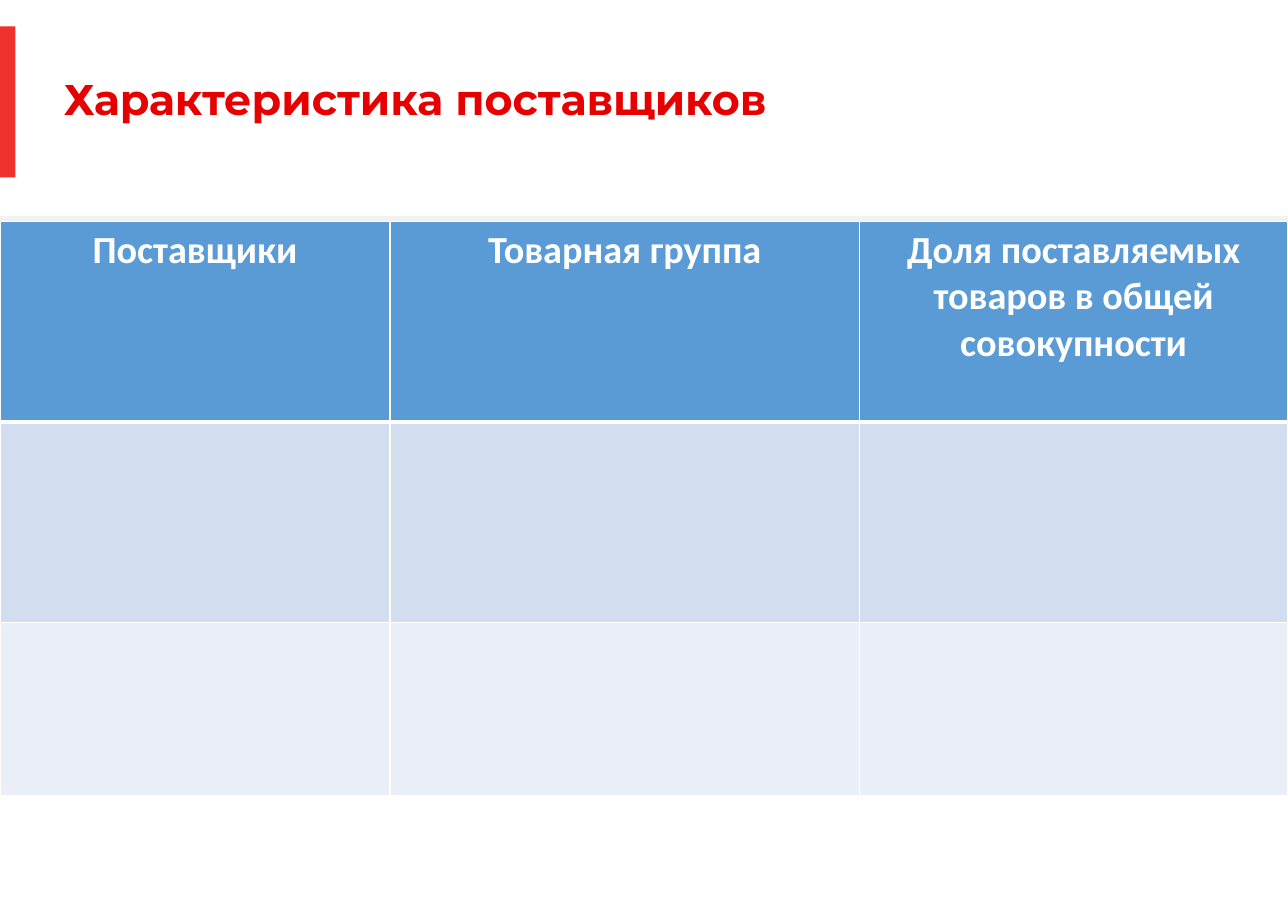
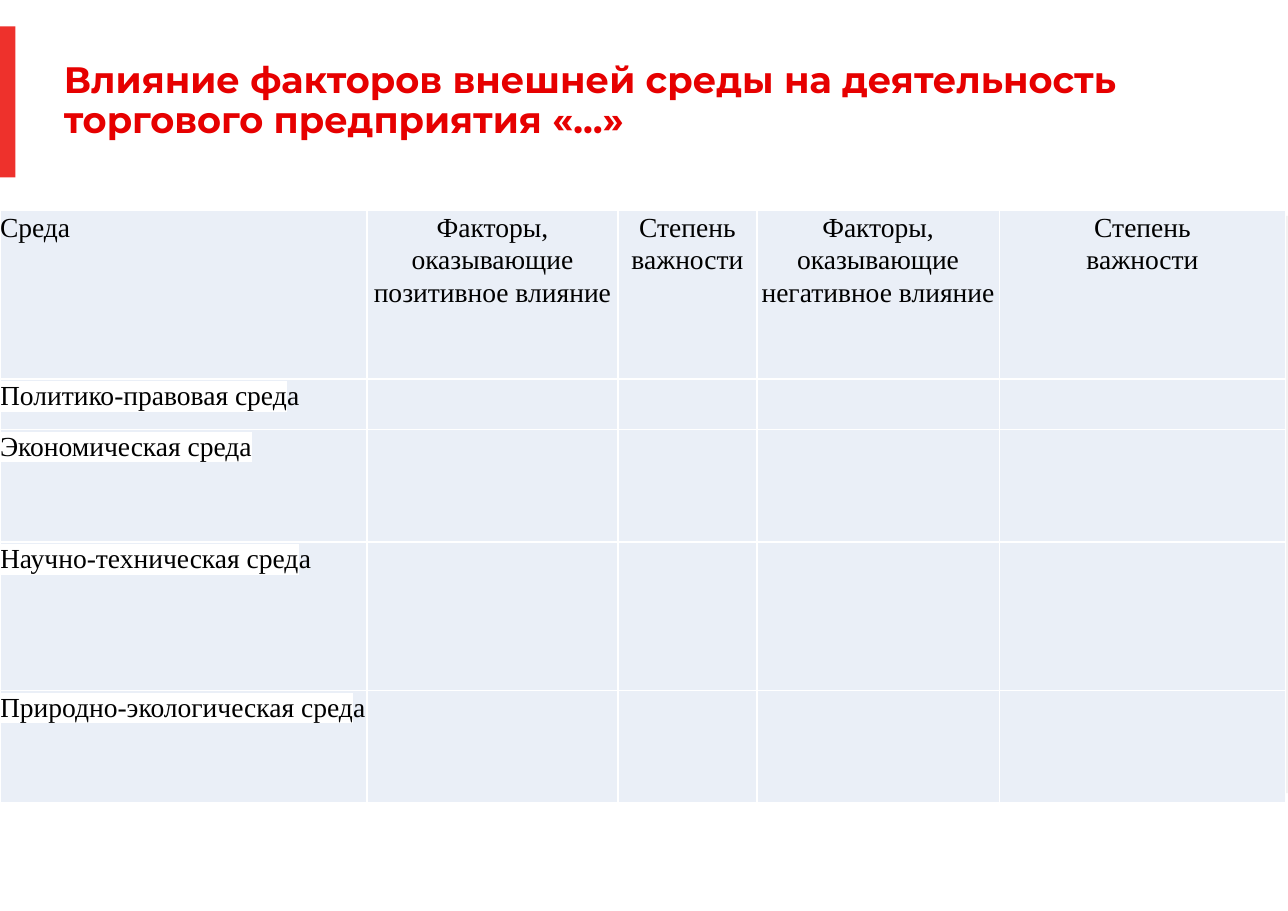
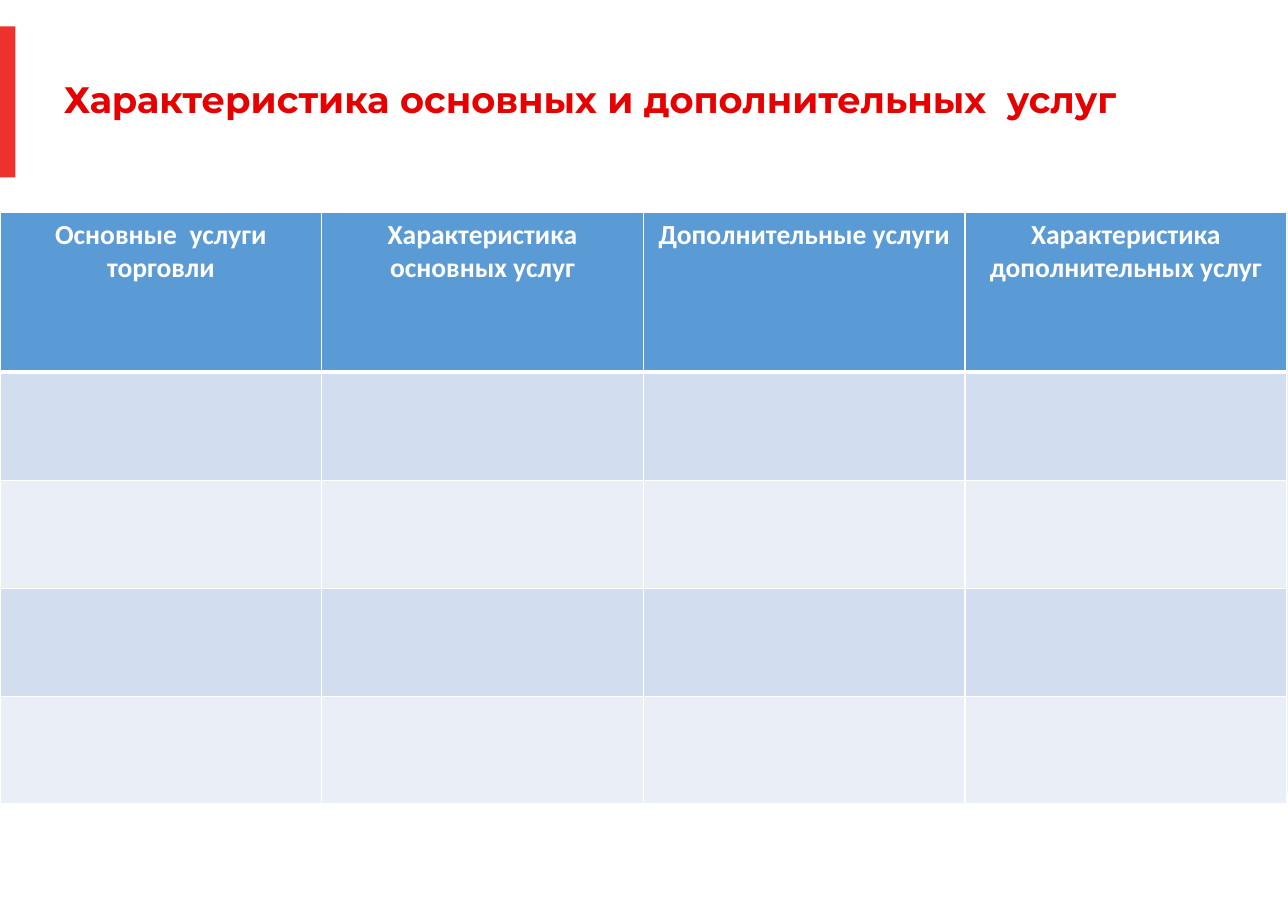
from dataclasses import dataclass

from lxml import etree
from pptx import Presentation
from pptx import util as u
from pptx.dml.color import RGBColor
from pptx.enum import shapes, text
from pptx.oxml import ns

PX = 9144  # EMU: 100 px to the inch
PAGE = (1169, 827)
BAND = (0, 196, 1169, 524)
HEADER = (0, 24, 1117, 137)


@dataclass(frozen=True)
class Theme:
    title_font: str = "Montserrat"
    title: str = "E60000"
    accent: str = "EE312C"
    band: str = "F2F2F2"
    white: str = "FFFFFF"
    black: str = "000000"
    head_fill: str = "5B9BD5"
    dark_row: str = "D2DEEF"
    light_row: str = "EAEFF7"
    title_large: int = 28
    title_small: int = 24
    head_large: int = 25
    body: int = 18
    thin_rule: int = 1
    thick_rule: int = 3


THEME = Theme()


@dataclass(frozen=True)
class TextStyle:
    font: str
    size: int
    color: str
    bold: bool = False
    spacing: float = 1.0


def emu(box):
    return [u.Emu(length * PX) for length in box]


def style_paragraph(para, style, align=text.PP_ALIGN.LEFT):
    para.alignment = align
    para.line_spacing = style.spacing
    font = para.font
    font.name, font.size, font.bold = style.font, u.Pt(style.size), style.bold
    font.color.rgb = RGBColor.from_string(style.color)


def add_block(page, box, color):
    block = page.shapes.add_shape(shapes.MSO_SHAPE.RECTANGLE, *emu(box))
    block.shadow.inherit = False
    block.fill.solid()
    block.fill.fore_color.rgb = RGBColor.from_string(color)
    block.line.fill.background()


def add_header(page, box, title, size, lines=1):
    """Place the accent bar and, centred on its height, the title."""
    left, top, width, height = box
    add_block(page, (left, top, 14, height), THEME.accent)
    title_height = lines * size * 3 // 2
    title_top = top + (height - title_height) // 2
    title_box = page.shapes.add_textbox(
        *emu((left + 58, title_top, width - 58, title_height)))
    frame = title_box.text_frame
    frame.word_wrap = True
    frame.vertical_anchor = text.MSO_ANCHOR.MIDDLE
    frame.margin_left = frame.margin_right = frame.margin_top = frame.margin_bottom = 0
    para = frame.paragraphs[0]
    para.text = title
    style_paragraph(para, TextStyle(THEME.title_font, size, THEME.title, True, 0.9))


def add_solid_color(parent, tag, color):
    holder = etree.SubElement(parent, ns.qn(tag))
    etree.SubElement(holder, ns.qn("a:srgbClr"), val=color)


def set_borders(cell, top, bottom):
    """Rule a cell in white; top and bottom are widths in points."""
    widths = {"L": THEME.thin_rule, "R": THEME.thin_rule, "T": top, "B": bottom}
    properties = cell._tc.get_or_add_tcPr()
    for index, (side, width) in enumerate(widths.items()):
        line = etree.Element(ns.qn(f"a:ln{side}"), w=str(u.Pt(width)))
        add_solid_color(line, "a:solidFill", THEME.white)
        properties.insert(index, line)


def add_table(page, origin, columns, rows, fills, head_rule=THEME.thin_rule):
    """Add a ruled table with one fill for each row."""
    box = (*origin, sum(columns), sum(rows))
    table = page.shapes.add_table(len(rows), len(columns), *emu(box)).table
    table.first_row = head_rule > THEME.thin_rule
    table.horz_banding = False
    for column, width in zip(table.columns, emu(columns)):
        column.width = width
    for row, height in zip(table.rows, emu(rows)):
        row.height = height
    rules = [THEME.thin_rule, head_rule] + [THEME.thin_rule] * (len(rows) - 1)
    for index, fill in enumerate(fills):
        for cell in table.rows[index].cells:
            cell.fill.solid()
            cell.fill.fore_color.rgb = RGBColor.from_string(fill)
            set_borders(cell, rules[index], rules[index + 1])
    return table


def add_banded_table(page, origin, columns, rows, headings, size):
    bands = [(THEME.dark_row, THEME.light_row)[i % 2] for i in range(len(rows) - 1)]
    table = add_table(page, origin, columns, rows, [THEME.head_fill, *bands],
                      THEME.thick_rule)
    style = TextStyle("Calibri", size, THEME.white, True)
    for cell, heading in zip(table.rows[0].cells, headings):
        cell.text = heading
        style_paragraph(cell.text_frame.paragraphs[0], style, text.PP_ALIGN.CENTER)


def add_factor_table(page, origin, columns, rows, headings, environments):
    """Add a plain table; each environment is a highlighted and a plain part."""
    table = add_table(page, origin, columns, rows, [THEME.light_row] * len(rows))
    style = TextStyle("Times New Roman", THEME.body, THEME.black, spacing=1.07)
    for index, (cell, heading) in enumerate(zip(table.rows[0].cells, headings)):
        cell.text = heading
        align = text.PP_ALIGN.CENTER if index else text.PP_ALIGN.LEFT
        for para in cell.text_frame.paragraphs:
            style_paragraph(para, style, align)
    for index, (marked, plain) in enumerate(environments, start=1):
        para = table.cell(index, 0).text_frame.paragraphs[0]
        span = para.add_run()
        span.text = marked
        add_solid_color(span._r.get_or_add_rPr(), "a:highlight", THEME.white)
        if plain:
            para.add_run().text = plain
        style_paragraph(para, style)
    labels = [*table.rows[0].cells, *(table.cell(i, 0) for i in range(1, len(rows)))]
    for cell in labels:
        cell.margin_left = cell.margin_right = cell.margin_top = cell.margin_bottom = 0


def add_page(deck, title, size, lines=1):
    page = deck.slides.add_slide(deck.slide_layouts[6])
    add_block(page, BAND, THEME.band)
    add_header(page, HEADER, title, size, lines)
    return page


def main():
    deck = Presentation()
    deck.slide_width, deck.slide_height = emu(PAGE)

    suppliers = add_page(deck, "Характеристика поставщиков", THEME.title_large)
    add_banded_table(
        suppliers, (0, 201), [354, 426, 389], [182, 182, 157],
        ["Поставщики", "Товарная группа",
         "Доля поставляемых товаров в общей совокупности"],
        THEME.head_large)

    factors = add_page(
        deck,
        "Влияние факторов внешней среды на деятельность торгового предприятия «…»",
        THEME.title_small, lines=2)
    importance = "Степень\nважности"
    add_factor_table(
        factors, (0, 191), [333, 228, 126, 220, 260], [153, 46, 102, 135, 102],
        ["Среда",
         "Факторы, оказывающие\nпозитивное влияние", importance,
         "Факторы, оказывающие\nнегативное влияние", importance],
        [("Политико-правовая сред", "а"),
         ("Экономическая среда", ""),
         ("Научно-техническая сред", "а"),
         ("Природно-экологическая сред", "а")])

    services = add_page(deck, "Характеристика основных и дополнительных  услуг",
                        THEME.title_small)
    add_banded_table(
        services, (0, 193), [292] * 4, [145] + [98] * 4,
        ["Основные  услуги торговли", "Характеристика основных услуг",
         "Дополнительные услуги", "Характеристика дополнительных услуг"],
        THEME.body)

    deck.save("out.pptx")


if __name__ == "__main__":
    main()
